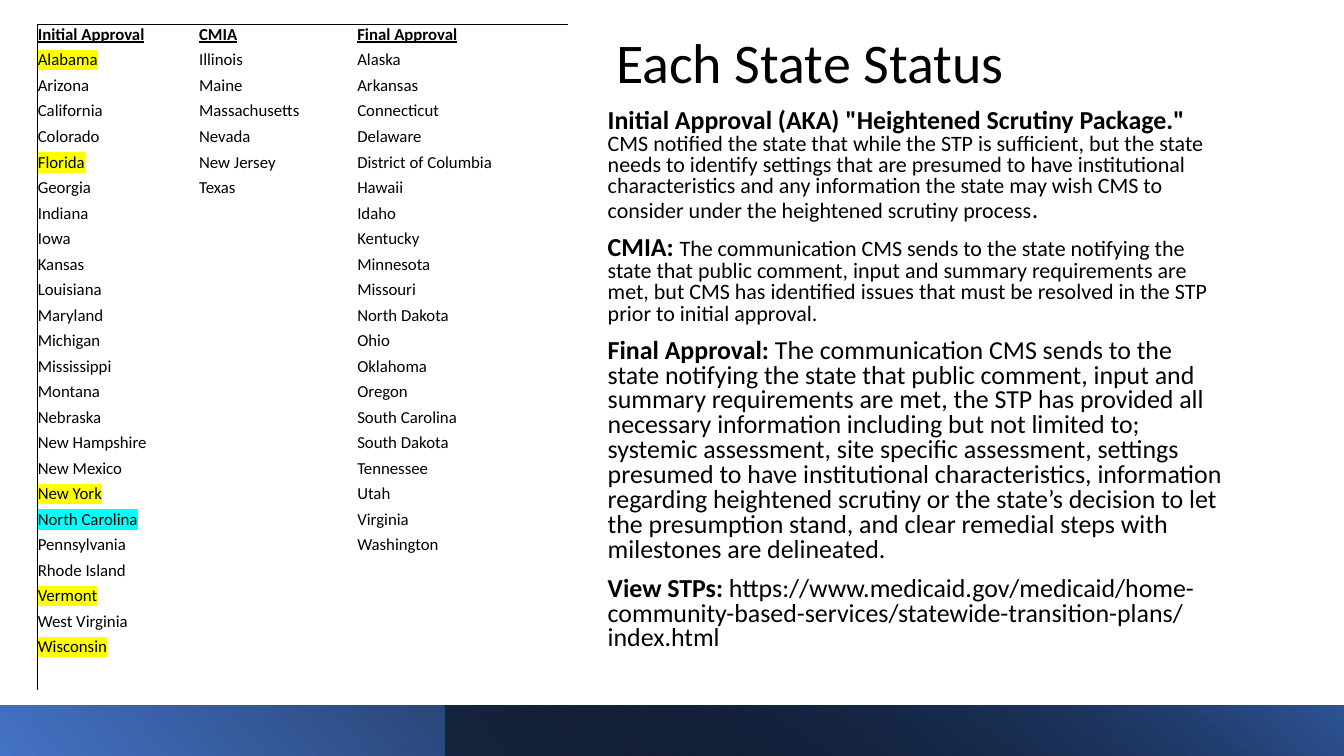
from itertools import zip_longest

from lxml.etree import SubElement
from pptx import Presentation
from pptx.dml.color import RGBColor
from pptx.enum.shapes import MSO_SHAPE as SHAPE
from pptx.enum.text import MSO_ANCHOR as ANCHOR
from pptx.oxml import parse_xml
from pptx.oxml.ns import nsdecls, qn
from pptx.util import Pt

FONT = "Calibri"
BLACK, YELLOW, CYAN = "000000", "FFFF00", "00FFFF"
COLUMN_WIDTHS = [115.2, 113, 134, 16.5]
ROW_HEIGHT, LAST_ROW_HEIGHT = 18.25, 19.5

INITIAL = [
    "Initial Approval", "Alabama", "Arizona", "California", "Colorado", "Florida",
    "Georgia", "Indiana", "Iowa", "Kansas", "Louisiana", "Maryland", "Michigan",
    "Mississippi", "Montana", "Nebraska", "New Hampshire", "New Mexico", "New York",
    "North Carolina", "Pennsylvania", "Rhode Island", "Vermont", "West Virginia",
    "Wisconsin", "",
]
CMIA = ["CMIA", "Illinois", "Maine", "Massachusetts", "Nevada", "New Jersey", "Texas"]
FINAL = [
    "Final Approval", "Alaska", "Arkansas", "Connecticut", "Delaware",
    "District of Columbia", "Hawaii", "Idaho", "Kentucky", "Minnesota", "Missouri",
    "North Dakota", "Ohio", "Oklahoma", "Oregon", "South Carolina", "South Dakota",
    "Tennessee", "Utah", "Virginia", "Washington",
]
HIGHLIGHTS = dict.fromkeys(["Alabama", "Florida", "New York", "Vermont", "Wisconsin"], YELLOW)
HIGHLIGHTS["North Carolina"] = CYAN
TWO_COLUMNS_WIDE = {
    "Final Approval", "District of Columbia", "North Dakota", "South Carolina",
    "South Dakota", "New Hampshire", "New Mexico", "North Carolina", "Pennsylvania",
    "Rhode Island", "West Virginia",
}

# Each run: text, size, bold
DEFINITIONS = [
    [
        ('Initial Approval (AKA) "Heightened Scrutiny Package." ', 18.5, True),
        ("CMS notified the state that while the STP is sufficient, but the state needs to "
         "identify settings that are presumed to have institutional characteristics and any "
         "information the state may wish CMS to consider under the heightened scrutiny process",
         15.7, False),
        (".", 18.5, False),
    ],
    [
        ("CMIA: ", 18.5, True),
        ("The communication CMS sends to the state notifying the state that public comment, "
         "input and summary requirements are met, but CMS has identified issues that must be "
         "resolved in the STP prior to initial approval.", 15.7, False),
    ],
    [
        ("Final Approval: ", 18.5, True),
        ("The communication CMS sends to the state notifying the state that public comment, "
         "input and summary requirements are met, the STP has provided all necessary "
         "information including but not limited to; systemic assessment, site specific "
         "assessment, settings presumed to have institutional characteristics, information "
         "regarding heightened scrutiny or the state’s decision to let the presumption stand, "
         "and clear remedial steps with milestones are delineated.", 18.5, False),
    ],
    [
        ("View STPs:", 18.5, True),
        (" https://www.medicaid.gov/medicaid/home-community-based-services/"
         "statewide-transition-plans/index.html", 18.5, False),
    ],
]


def color(value):
    return RGBColor.from_string(value)


def format_run(span, size, bold=False, underline=False):
    font = span.font
    font.name, font.size, font.bold, font.underline = FONT, Pt(size), bold, underline
    font.color.rgb = color(BLACK)


def highlight(span, value):
    fill = span.font._element.find(qn("a:solidFill"))
    fill.addnext(parse_xml(
        f'<a:highlight {nsdecls("a")}><a:srgbClr val="{value}"/></a:highlight>'))


def add_text(page, left, top, width, height, paragraphs, line_spacing, anchor=ANCHOR.TOP):
    frame = page.shapes.add_textbox(Pt(left), Pt(top), Pt(width), Pt(height)).text_frame
    frame.word_wrap = True
    frame.vertical_anchor = anchor
    for index, runs in enumerate(paragraphs):
        para = frame.add_paragraph() if index else frame.paragraphs[0]
        para.line_spacing = line_spacing
        para.space_before = Pt(10 if index else 0)
        for text, size, bold in runs:
            span = para.add_run()
            span.text = text
            format_run(span, size, bold)


def add_band(page, left, width, stops, angle, rotation=0):
    """Draw a mirrored gradient band; stops are (position, colour, opacity)."""
    band = page.shapes.add_shape(SHAPE.RECTANGLE, Pt(left), Pt(504), Pt(width), Pt(36))
    band.shadow.inherit = False
    band.line.fill.background()
    band.rotation = rotation
    properties = band._element.spPr
    properties.find(qn("a:xfrm")).set("flipH", "1")
    stop_xml = "".join(
        f'<a:gs pos="{position * 1000}"><a:srgbClr val="{value}">'
        f'<a:alpha val="{opacity * 1000}"/></a:srgbClr></a:gs>'
        for position, value, opacity in stops)
    properties.find(qn("a:prstGeom")).addnext(parse_xml(
        f'<a:gradFill {nsdecls("a")} rotWithShape="1"><a:gsLst>{stop_xml}</a:gsLst>'
        f'<a:lin ang="{angle * 60000}" scaled="0"/></a:gradFill>'))


def add_border(cell, side):
    cell._tc.get_or_add_tcPr().insert(0, parse_xml(
        f'<a:ln{side} {nsdecls("a")} w="{Pt(1)}"><a:solidFill>'
        f'<a:srgbClr val="{BLACK}"/></a:solidFill></a:ln{side}>'))


def fill_cell(cell, text, is_header):
    cell.margin_left = cell.margin_right = cell.margin_top = 0
    cell.margin_bottom = Pt(3.6)
    cell.vertical_anchor = ANCHOR.BOTTOM
    cell.fill.background()
    para = cell.text_frame.paragraphs[0]
    if not text:
        SubElement(para._p, qn("a:endParaRPr"), sz="1200")
        return
    para.text = text
    span = para.runs[0]
    format_run(span, 12, is_header, is_header)
    if text in HIGHLIGHTS:
        highlight(span, HIGHLIGHTS[text])


def add_state_table(page):
    rows = list(zip_longest(INITIAL, CMIA, FINAL, [""], fillvalue=""))
    height = ROW_HEIGHT * (len(rows) - 1) + LAST_ROW_HEIGHT
    table = page.shapes.add_table(
        len(rows), len(COLUMN_WIDTHS), Pt(27), Pt(17.5),
        Pt(sum(COLUMN_WIDTHS)), Pt(height)).table
    table.first_row = table.horz_banding = False
    table._tbl.tblPr.find(qn("a:tableStyleId")).text = "{2D5ABB26-0587-4C30-8999-92F81FD0307C}"
    for column, width in zip(table.columns, COLUMN_WIDTHS):
        column.width = Pt(width)
    for row_index, row in enumerate(rows):
        is_last = row_index == len(rows) - 1
        table.rows[row_index].height = Pt(LAST_ROW_HEIGHT if is_last else ROW_HEIGHT)
        for column_index, text in enumerate(row):
            cell = table.cell(row_index, column_index)
            fill_cell(cell, text, row_index == 0)
            if row_index == 0:
                add_border(cell, "T")
            if column_index == 0:
                add_border(cell, "L")
        for column_index, text in enumerate(row):
            if text in TWO_COLUMNS_WIDE:
                table.cell(row_index, column_index).merge(
                    table.cell(row_index, column_index + 1))


def main():
    deck = Presentation()
    deck.slide_width, deck.slide_height = Pt(960), Pt(540)
    page = deck.slides.add_slide(deck.slide_layouts[6])
    add_text(page, 433, 13.5, 453, 58.5, [[("Each State Status", 40, False)]], 0.9, ANCHOR.BOTTOM)
    add_text(page, 427, 75, 453, 453.5, DEFINITIONS, 0.8)
    add_band(page, 0, 960, [(0, "4472C4", 100), (90, BLACK, 100)], 40, rotation=180)
    add_band(page, 318, 642, [(0, BLACK, 50), (100, "2F5597", 100)], 230)
    add_state_table(page)
    deck.save("out.pptx")


if __name__ == "__main__":
    main()
